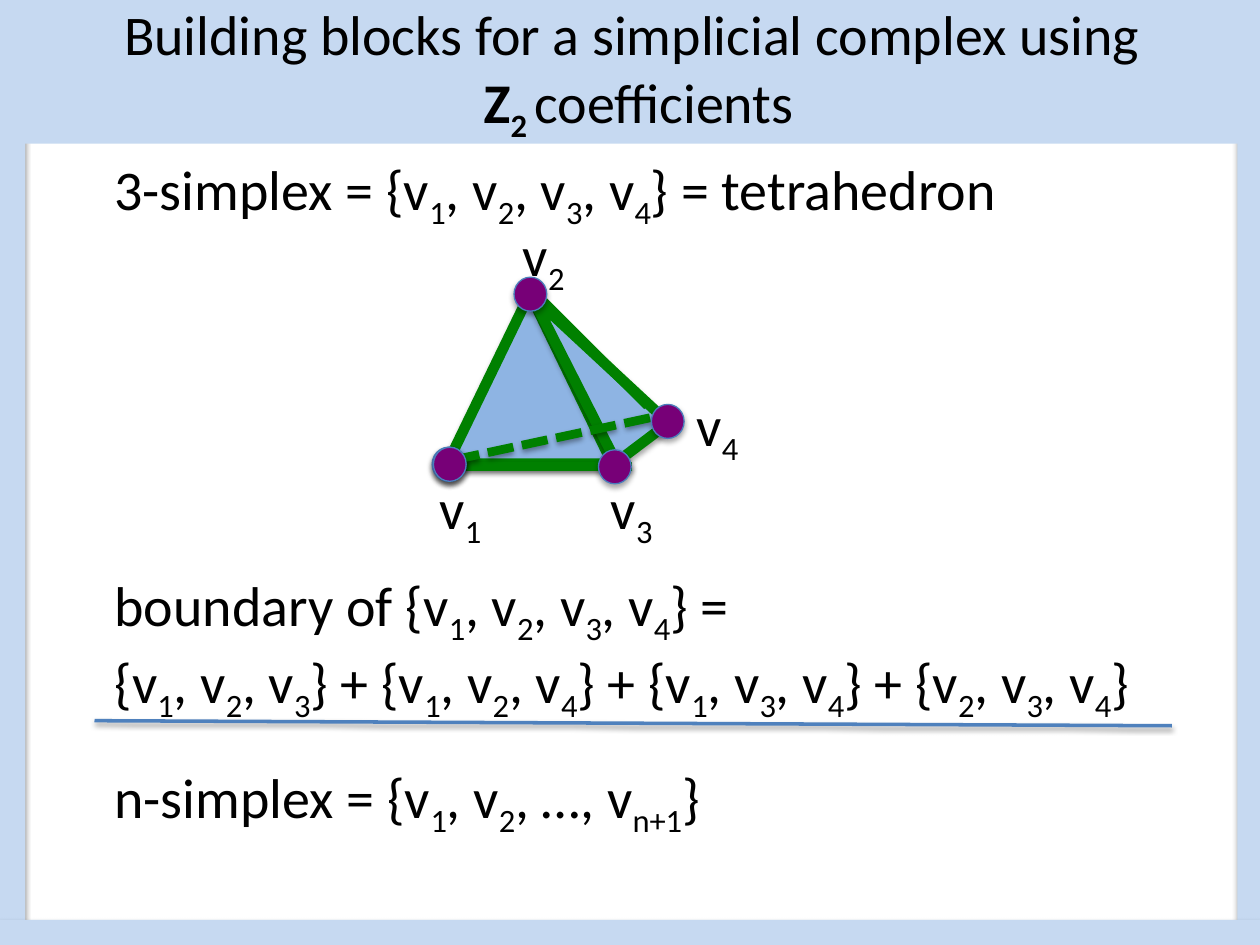
from lxml.etree import SubElement
from pptx import Presentation
from pptx.dml.color import RGBColor
from pptx.enum.dml import MSO_LINE
from pptx.enum.shapes import MSO_CONNECTOR, MSO_SHAPE
from pptx.enum.text import MSO_ANCHOR, PP_ALIGN
from pptx.oxml.ns import qn
from pptx.util import Inches, Pt

BLACK = RGBColor(0x00, 0x00, 0x00)
FACE = RGBColor(0x8E, 0xB4, 0xE3)
EDGE = RGBColor(0x00, 0x80, 0x00)
VERTEX = RGBColor(0x77, 0x00, 0x77)
VERTEX_RIM = RGBColor(0x4B, 0x7E, 0xBC)
FRAME = RGBColor(0xC6, 0xD9, 0xF1)
RULE = RGBColor(0x4F, 0x81, 0xBD)


class SlideBuilder:
    font_name = "Calibri"
    font_size = Pt(32)

    def __init__(self, slide):
        self.slide = slide

    def add_shadow(self, element, opacity, distance):
        """Soft shadow falling straight down; none when opacity is 0."""
        effects = SubElement(element.spPr, qn("a:effectLst"))
        if opacity:
            shadow = SubElement(effects, qn("a:outerShdw"), blurRad="40000",
                                dist=str(distance), dir="5400000", rotWithShape="0")
            black = SubElement(shadow, qn("a:srgbClr"), val="000000")
            SubElement(black, qn("a:alpha"), val=str(opacity * 1000))

    def set_text(self, frame, lines, align=PP_ALIGN.LEFT, gaps=()):
        """Fill a frame; _x_ marks a subscript and *x* marks bold."""
        frame.word_wrap = True
        for index, line in enumerate(lines):
            paragraph = frame.paragraphs[0] if index == 0 else frame.add_paragraph()
            paragraph.alignment = align
            paragraph.font.name = self.font_name
            paragraph.font.size = self.font_size
            paragraph.font.color.rgb = BLACK
            if gaps:
                paragraph.space_before = Pt(gaps[index])
            for i, section in enumerate(line.split("*")):
                for j, piece in enumerate(section.split("_")):
                    if not piece:
                        continue
                    run = paragraph.add_run()
                    run.text = piece
                    if i % 2:
                        run.font.bold = True
                    if j % 2:
                        run.font._element.set("baseline", "-25000")

    def text(self, left, top, width, height, lines, gaps=()):
        box = self.slide.shapes.add_textbox(
            Inches(left), Inches(top), Inches(width), Inches(height))
        self.set_text(box.text_frame, lines, gaps=gaps)

    def shape(self, kind, left, top, width, height, fill,
              line=None, line_width=0, rotation=0, shadow=35):
        shape = self.slide.shapes.add_shape(
            kind, Inches(left), Inches(top), Inches(width), Inches(height))
        shape.rotation = rotation
        shape.fill.solid()
        shape.fill.fore_color.rgb = fill
        if line is None:
            shape.line.fill.background()
        else:
            shape.line.color.rgb = line
            shape.line.width = Pt(line_width)
        shape.shadow.inherit = False
        if shadow:
            shape._element.spPr.remove(shape._element.spPr.find(qn("a:effectLst")))
            self.add_shadow(shape._element, shadow, 23000)
        return shape

    def vertex(self, left, top):
        self.shape(MSO_SHAPE.OVAL, left, top, 0.26, 0.27, VERTEX, VERTEX_RIM, 0.75)

    def line(self, start, end, color, width, dash=None, shadow=38):
        line = self.slide.shapes.add_connector(
            MSO_CONNECTOR.STRAIGHT, *map(Inches, start + end))
        line.line.color.rgb = color
        line.line.width = Pt(width)
        if dash:
            line.line.dash_style = dash
        self.add_shadow(line._element, shadow, 20000)


def main():
    prs = Presentation()
    prs.slide_width, prs.slide_height = Inches(10), Inches(7.5)
    page = SlideBuilder(prs.slides.add_slide(prs.slide_layouts[6]))

    # Definitions; the large gap leaves room for the tetrahedron
    page.text(0.81, 1.18, 8.55, 5.76, [
        "3-simplex = {v_1_, v_2_, v_3_, v_4_} = tetrahedron",
        "boundary of {v_1_, v_2_, v_3_, v_4_} =",
        "{v_1_, v_2_, v_3_} + {v_1_, v_2_, v_4_} + "
        "{v_1_, v_3_, v_4_} + {v_2_, v_3_, v_4_}",
        "n-simplex = {v_1_, v_2_, …, v_n+1_}",
    ], gaps=(0, 194, 0, 22))

    # Tetrahedron faces and solid edges
    triangle = MSO_SHAPE.ISOSCELES_TRIANGLE
    page.shape(triangle, 3.55, 2.33, 1.31, 1.35, FACE, EDGE, 6)
    page.shape(triangle, 4.4, 2.2, 0.52, 1.46, FACE, EDGE, 6, rotation=323)
    page.line((4.26, 2.34), (5.14, 3.22), EDGE, 5.5, shadow=0)
    page.line((5.02, 3.7), (3.67, 3.7), EDGE, 5)

    # Vertices, with the hidden edge running under v1 and v4
    for left, top in ((4.75, 3.57), (3.44, 3.55), (4.08, 2.2), (3.43, 3.55)):
        page.vertex(left, top)
    page.line((3.6, 3.65), (5.28, 3.29), EDGE, 5, dash=MSO_LINE.SQUARE_DOT)
    for left, top in ((3.44, 3.55), (5.17, 3.21)):
        page.vertex(left, top)

    # Vertex labels
    for number, left, top in ((4, 5.43, 3.05), (3, 4.75, 3.71),
                              (1, 3.39, 3.71), (2, 4.05, 1.7)):
        page.text(left, top, 0.63, 0.57, [f"v_{number}_"])

    # Rule above the general case
    page.line((0.75, 5.72), (9.3, 5.76), RULE, 2)

    # Frame: left, right, top, bottom
    for left, top, width, height, shadow in (
            (0, 0, 0.2, 7.5, 35), (9.82, 0, 0.2, 7.5, 35),
            (0.02, 0, 10.01, 0.2, 0), (-0.01, 7.3, 10.01, 0.2, 35)):
        page.shape(MSO_SHAPE.RECTANGLE, left, top, width, height, FRAME, shadow=shadow)

    # Title band
    title = page.shape(MSO_SHAPE.RECTANGLE, 0.02, 0, 10, 1.14, FRAME, shadow=0)
    title.text_frame.vertical_anchor = MSO_ANCHOR.MIDDLE
    page.set_text(title.text_frame, [
        "Building blocks for a simplicial complex using",
        "* Z_2 _*coefficients",
    ], PP_ALIGN.CENTER)

    prs.save("out.pptx")


if __name__ == "__main__":
    main()
